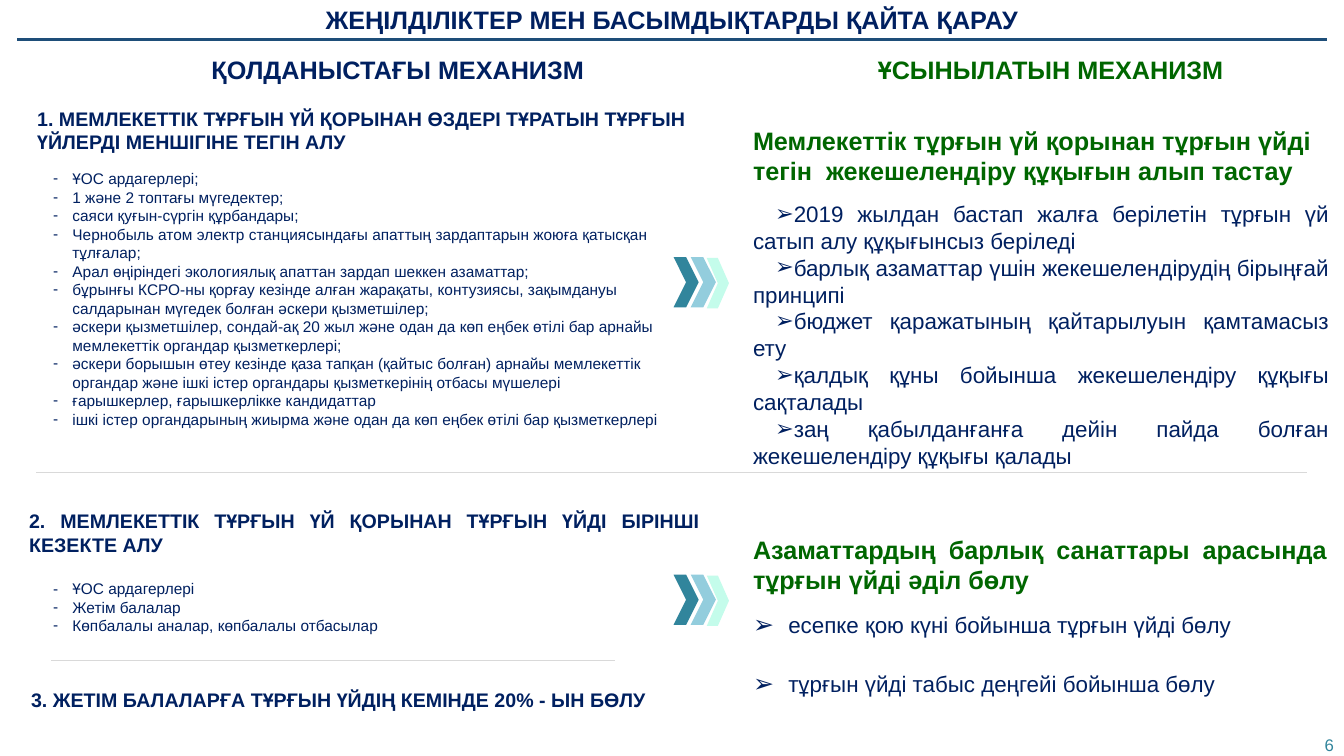
from dataclasses import dataclass
from typing import Optional

from lxml.etree import SubElement
from pptx import Presentation
from pptx.dml.color import RGBColor
from pptx.enum.shapes import MSO_CONNECTOR as Link, MSO_SHAPE as Form
from pptx.enum.text import MSO_ANCHOR as Anchor, MSO_AUTO_SIZE as Fit, PP_ALIGN as Align
from pptx.oxml.ns import qn
from pptx.util import Inches, Pt

# Colours
NAVY = RGBColor(0x00, 0x20, 0x60)
GREEN = RGBColor(0x00, 0x66, 0x00)
BLUE = RGBColor(0x1E, 0x4E, 0x79)
GREY = RGBColor(0xD9, 0xD9, 0xD9)
TEAL = RGBColor(0x31, 0x85, 0x9C)
SKY = RGBColor(0x93, 0xCD, 0xDD)
MINT = RGBColor(0xC4, 0xFC, 0xEB)


@dataclass
class Style:
    size: float
    color: RGBColor
    bold: bool = False
    align: Align = Align.LEFT
    bullet: str = ""
    scale: int = 100
    left: float = 0
    first: float = 0
    after: float = 0


@dataclass
class Para:
    text: str
    style: Style


@dataclass
class Box:
    left: float
    top: float
    width: float
    height: float
    paras: list[Para]
    wrap: bool = True
    grow: bool = True
    inset: Optional[tuple[float, float]] = None


@dataclass
class Rule:
    start: float
    end: float
    top: float
    color: RGBColor
    weight: float


# Text styles
TITLE = Style(18, NAVY, True, Align.CENTER)
OFFER = Style(18, GREEN, True, Align.CENTER)
HEAD = Style(14, NAVY, True)
WIDE = Style(14, NAVY, True, Align.JUSTIFY)
DASH = Style(11, NAVY, bullet="-", left=0.19, first=-0.19)
GOAL = Style(18, GREEN, True, after=10.5)
SHARE = Style(18, GREEN, True, Align.JUSTIFY, after=12)
ARROW = Style(16, NAVY, align=Align.JUSTIFY, bullet="➢", first=0.22)
POINT = Style(16, NAVY, align=Align.JUSTIFY, bullet="➢", scale=112,
              left=0.35, first=-0.35, after=23)
PAGE = Style(12, TEAL, align=Align.RIGHT)


def paras(style: Style, *texts: str) -> list[Para]:
    return [Para(text, style) for text in texts]


BOXES = [
    # Title, column heads and page number
    Box(0, -0.05, 13.33, 0.48, paras(TITLE, "ЖЕҢІЛДІЛІКТЕР МЕН БАСЫМДЫҚТАРДЫ ҚАЙТА ҚАРАУ"),
        grow=False, inset=(0.07, 0.04)),
    Box(1.94, 0.49, 4.01, 0.4, paras(TITLE, "ҚОЛДАНЫСТАҒЫ МЕХАНИЗМ"), wrap=False),
    Box(8.59, 0.49, 3.66, 0.4, paras(OFFER, "ҰСЫНЫЛАТЫН МЕХАНИЗМ"), wrap=False),
    Box(12.77, 7.19, 0.59, 0.39, paras(PAGE, "6"), grow=False, inset=(0.13, 0.07)),
    # Current mechanism
    Box(0.27, 1.01, 7.35, 0.57, paras(
        HEAD, "1. МЕМЛЕКЕТТІК ТҰРҒЫН ҮЙ ҚОРЫНАН ӨЗДЕРІ ТҰРАТЫН ТҰРҒЫН "
              "ҮЙЛЕРДІ МЕНШІГІНЕ ТЕГІН АЛУ")),
    Box(0.43, 1.63, 6.23, 2.69, paras(
        DASH,
        "ҰОС ардагерлері;",
        "1 және 2 топтағы мүгедектер;",
        "саяси қуғын-сүргін құрбандары;",
        "Чернобыль атом электр станциясындағы апаттың зардаптарын жоюға қатысқан тұлғалар;",
        "Арал өңіріндегі экологиялық апаттан зардап шеккен азаматтар;",
        "бұрынғы КСРО-ны қорғау кезінде алған жарақаты, контузиясы, зақымдануы "
        "салдарынан мүгедек болған әскери қызметшілер;",
        "әскери қызметшілер, сондай-ақ 20 жыл және одан да көп еңбек өтілі бар арнайы "
        "мемлекеттік органдар қызметкерлері;",
        "әскери борышын өтеу кезінде қаза тапқан (қайтыс болған) арнайы мемлекеттік "
        "органдар және ішкі істер органдары қызметкерінің отбасы мүшелері",
        "ғарышкерлер, ғарышкерлікке кандидаттар",
        "ішкі істер органдарының жиырма және одан да көп еңбек өтілі бар қызметкерлері")),
    Box(0.19, 5, 6.85, 0.57, paras(
        WIDE, "2. МЕМЛЕКЕТТІК ТҰРҒЫН ҮЙ ҚОРЫНАН ТҰРҒЫН ҮЙДІ БІРІНШІ КЕЗЕКТЕ АЛУ")),
    Box(0.43, 5.7, 6.23, 0.66, paras(
        DASH, "ҰОС ардагерлері", "Жетім балалар", "Көпбалалы аналар, көпбалалы отбасылар")),
    Box(0.21, 6.78, 6.59, 0.34, paras(
        WIDE, "3. ЖЕТІМ БАЛАЛАРҒА ТҰРҒЫН ҮЙДІҢ КЕМІНДЕ 20% - ЫН БӨЛУ")),
    # Proposed mechanism
    Box(7.37, 1.19, 5.91, 3.28, paras(
        GOAL, "Мемлекеттік тұрғын үй қорынан тұрғын үйді тегін  жекешелендіру "
              "құқығын алып тастау") + paras(
        ARROW,
        "2019 жылдан бастап жалға берілетін тұрғын үй сатып алу құқығынсыз беріледі",
        "барлық азаматтар үшін жекешелендірудің бірыңғай принципі",
        "бюджет қаражатының қайтарылуын қамтамасыз ету",
        "қалдық құны бойынша жекешелендіру құқығы сақталады",
        "заң қабылданғанға дейін пайда болған жекешелендіру құқығы қалады")),
    Box(7.37, 5.25, 5.89, 1.77, paras(
        SHARE, "Азаматтардың барлық санаттары арасында тұрғын үйді әділ бөлу") + paras(
        POINT,
        "есепке қою күні бойынша тұрғын үйді бөлу",
        "тұрғын үйді табыс деңгейі бойынша бөлу")),
]

RULES = [
    Rule(0.17, 13.16, 0.39, BLUE, 2.25),
    Rule(0.36, 12.96, 4.69, GREY, 0.5),
    Rule(0.51, 6.1, 6.55, GREY, 0.5),
]

# Chevron offsets within a group: left, top, width, colour
STRIPES = [(0, 0, 0.25, TEAL), (0.17, 0, 0.25, SKY), (0.33, 0.01, 0.22, MINT)]
CHEVRON_TOPS = (2.55, 5.7)


def set_para(para, item: Para) -> None:
    style = item.style
    para.alignment = style.align
    para.space_after = Pt(style.after)
    props = para._p.get_or_add_pPr()
    props.set("marL", str(Inches(style.left)))
    props.set("indent", str(Inches(style.first)))
    if style.bullet:
        SubElement(props, qn("a:buSzPct")).set("val", str(style.scale * 1000))
        SubElement(props, qn("a:buFont")).set("typeface", "Arial")
        SubElement(props, qn("a:buChar")).set("char", style.bullet)
    run = para.add_run()
    run.text = item.text
    look = {"name": "Arial", "size": Pt(style.size), "bold": style.bold}
    for key, value in look.items():
        setattr(run.font, key, value)
    run.font.color.rgb = style.color


def add_box(slide, box: Box) -> None:
    area = map(Inches, (box.left, box.top, box.width, box.height))
    frame = slide.shapes.add_textbox(*area).text_frame
    look = {"word_wrap": box.wrap,
            "auto_size": Fit.SHAPE_TO_FIT_TEXT if box.grow else Fit.NONE}
    if box.inset:
        side, edge = map(Inches, box.inset)
        look |= {"vertical_anchor": Anchor.MIDDLE, "margin_left": side,
                 "margin_right": side, "margin_top": edge, "margin_bottom": edge}
    for key, value in look.items():
        setattr(frame, key, value)
    for order, item in enumerate(box.paras):
        set_para(frame.add_paragraph() if order else frame.paragraphs[0], item)


def add_rule(slide, rule: Rule) -> None:
    ends = map(Inches, (rule.start, rule.top, rule.end, rule.top))
    line = slide.shapes.add_connector(Link.STRAIGHT, *ends)
    line.line.color.rgb = rule.color
    line.line.width = Pt(rule.weight)
    SubElement(line._element.spPr, qn("a:effectLst"))


def add_chevrons(slide, top: float) -> None:
    for left, drop, width, color in STRIPES:
        area = map(Inches, (6.68 + left, top + drop, width, 0.5))
        shape = slide.shapes.add_shape(Form.CHEVRON, *area)
        shape.shadow.inherit = False
        shape.fill.solid()
        shape.fill.fore_color.rgb = color
        shape.line.fill.background()


def main() -> None:
    deck = Presentation()
    deck.slide_width, deck.slide_height = Inches(13.33), Inches(7.5)
    slide = deck.slides.add_slide(deck.slide_layouts[6])
    for box in BOXES:
        add_box(slide, box)
    for rule in RULES:
        add_rule(slide, rule)
    for top in CHEVRON_TOPS:
        add_chevrons(slide, top)
    deck.save("out.pptx")


if __name__ == "__main__":
    main()
